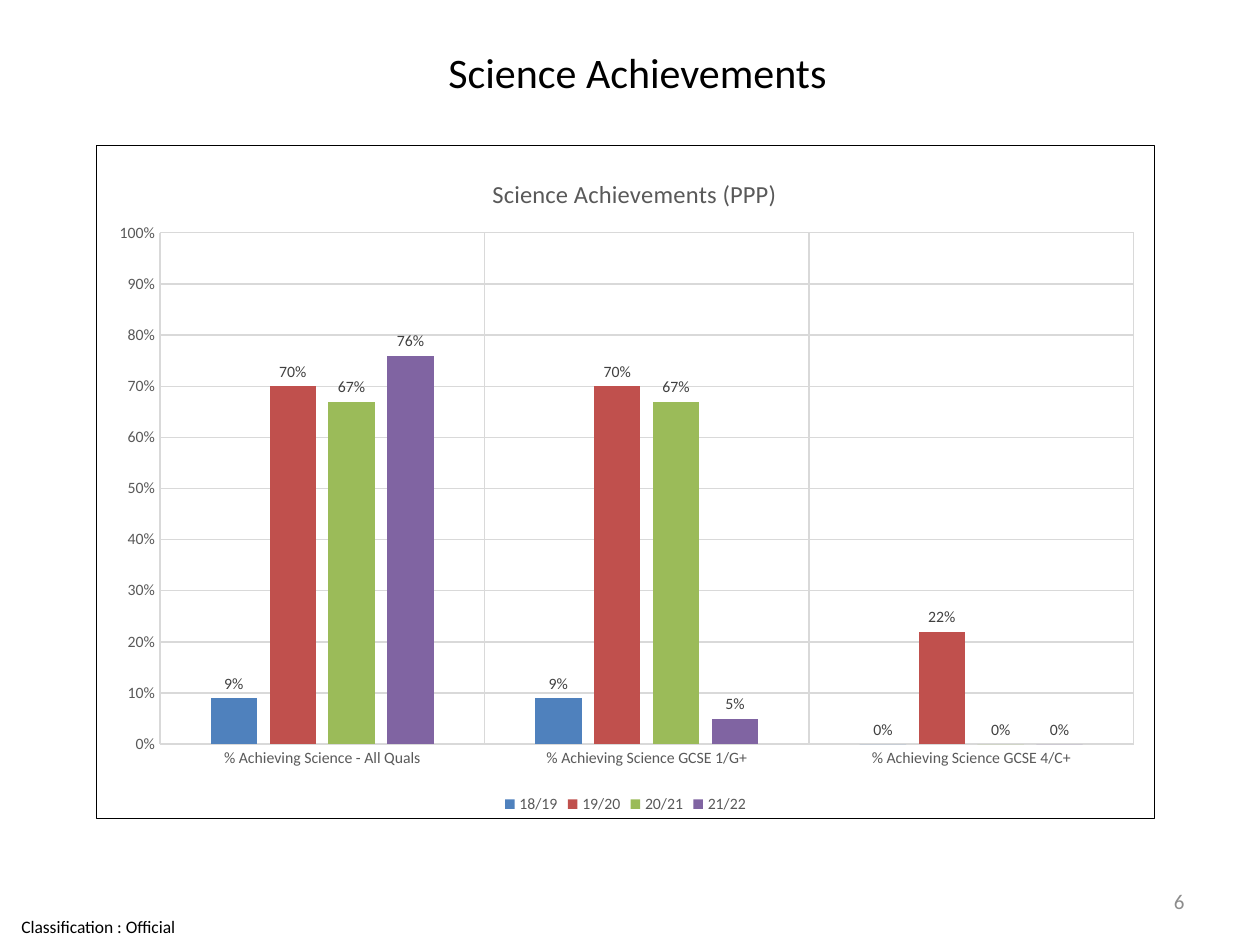
from dataclasses import dataclass

from lxml import etree
from pptx import Presentation, util as u
from pptx.chart.data import CategoryChartData
from pptx.dml.color import RGBColor
from pptx.enum import chart as ch, text
from pptx.oxml import parse_xml
from pptx.oxml.ns import nsdecls, qn

W, H = u.Inches(10), u.Inches(7.5)
FONT = "Calibri"
BLACK = RGBColor(0x00, 0x00, 0x00)
DARK = RGBColor(0x40, 0x40, 0x40)
GREY = RGBColor(0x59, 0x59, 0x59)
MUTED = RGBColor(0x8C, 0x8C, 0x8C)
GRID = RGBColor(0xD9, 0xD9, 0xD9)
BLUE = RGBColor(0x4F, 0x81, 0xBD)
RED = RGBColor(0xC0, 0x50, 0x4D)
GREEN = RGBColor(0x9B, 0xBB, 0x59)
PURPLE = RGBColor(0x80, 0x64, 0xA2)


@dataclass
class Label:
    words: str
    box: tuple  # left, top, width, height in inches
    size: int
    color: RGBColor
    align: text.PP_ALIGN
    margin: float = 0.1


@dataclass
class Year:
    name: str
    values: tuple
    color: RGBColor


LABELS = [
    Label("Classification : Official", (0, 7.21, 1.56, 0.29), 10, BLACK, text.PP_ALIGN.CENTER, 0),
    Label("Science Achievements", (0.76, 0.29, 8.6, 0.55), 24, BLACK, text.PP_ALIGN.CENTER),
    Label("6", (7.17, 6.95, 2.33, 0.4), 12, MUTED, text.PP_ALIGN.RIGHT),
]
CATEGORIES = [f"% Achieving Science {q}" for q in ("- All Quals", "GCSE 1/G+", "GCSE 4/C+")]
YEARS = [
    Year("18/19", (0.09, 0.09, 0), BLUE),
    Year("19/20", (0.7, 0.7, 0.22), RED),
    Year("20/21", (0.67, 0.67, 0), GREEN),
    Year("21/22", (0.76, 0.05, 0), PURPLE),
]


def set_font(font, size: float, color: RGBColor) -> None:
    font.name, font.size, font.bold = FONT, u.Pt(size), False
    font.color.rgb = color


def set_line(line, color: RGBColor) -> None:
    line.color.rgb, line.width = color, u.Pt(0.75)


def add_label(s, label: Label) -> None:
    tf = s.shapes.add_textbox(*map(u.Inches, label.box)).text_frame
    tf.word_wrap = True
    tf.vertical_anchor = text.MSO_ANCHOR.MIDDLE
    tf.margin_left = tf.margin_right = u.Inches(label.margin)
    tf.margin_top = tf.margin_bottom = 0
    p = tf.paragraphs[0]
    p.alignment = label.align
    r = p.add_run()
    r.text = label.words
    set_font(r.font, label.size, label.color)


def place(parent, before: str, **shares: float) -> None:
    """Give a chart part a manual layout, in shares of the chart."""
    for old in parent.findall(qn("c:layout")):
        parent.remove(old)
    layout = parse_xml(f"<c:layout {nsdecls('c')}><c:manualLayout/></c:layout>")
    manual = layout[0]
    if "w" in shares:
        etree.SubElement(manual, qn("c:layoutTarget")).set("val", "inner")
    for mode in ("xMode", "yMode"):
        etree.SubElement(manual, qn(f"c:{mode}")).set("val", "edge")
    for key, share in shares.items():
        etree.SubElement(manual, qn(f"c:{key}")).set("val", str(share))
    parent.find(qn(before)).addprevious(layout)


def style_axis(axis) -> None:
    axis.major_tick_mark = axis.minor_tick_mark = ch.XL_TICK_MARK.NONE
    set_font(axis.tick_labels.font, 9, GREY)
    axis.has_major_gridlines = True
    set_line(axis.major_gridlines.format.line, GRID)


def add_results_chart(s) -> None:
    data = CategoryChartData(number_format="0%")
    data.categories = CATEGORIES
    for year in YEARS:
        data.add_series(year.name, year.values)
    box = map(u.Inches, (0.76, 1.15, 8.41, 5.35))
    chart = s.shapes.add_chart(ch.XL_CHART_TYPE.COLUMN_CLUSTERED, *box, data).chart
    set_font(chart.font, 10, BLACK)

    # Title and legend
    chart.has_title = True
    r = chart.chart_title.text_frame.paragraphs[0].add_run()
    r.text = "Science Achievements (PPP)"
    set_font(r.font, 14, GREY)
    chart.has_legend = True
    chart.legend.position = ch.XL_LEGEND_POSITION.BOTTOM
    chart.legend.include_in_layout = False
    set_font(chart.legend.font, 9, GREY)

    # Axes
    style_axis(chart.category_axis)
    set_line(chart.category_axis.format.line, GRID)
    axis = chart.value_axis
    style_axis(axis)
    axis.format.line.fill.background()
    axis.minimum_scale, axis.maximum_scale, axis.major_unit = 0, 1, 0.1
    axis.tick_labels.number_format = "0%"
    axis.tick_labels.number_format_is_linked = False

    # Columns
    plot = chart.plots[0]
    plot.gap_width, plot.overlap, plot.vary_by_categories = 219, -27, False
    for series, year in zip(plot.series, YEARS):
        series.format.fill.solid()
        series.format.fill.fore_color.rgb = year.color
        labels = series.data_labels
        labels.show_value = True
        labels.position = ch.XL_LABEL_POSITION.OUTSIDE_END
        labels.number_format, labels.number_format_is_linked = "0%", False
        set_font(labels.font, 9, DARK)

    # Layout and frame
    space = chart.element
    place(space.find(".//" + qn("c:plotArea")), "c:barChart", x=0.06, y=0.13, w=0.92, h=0.76)
    place(space.find(".//" + qn("c:title")), "c:overlay", x=0.37, y=0.04)
    space.find(qn("c:chart")).addnext(parse_xml(
        f'<c:spPr {nsdecls("c", "a")}><a:solidFill><a:srgbClr val="FFFFFF"/></a:solidFill>'
        f'<a:ln w="{u.Pt(0.75)}"><a:solidFill><a:srgbClr val="{BLACK}"/></a:solidFill></a:ln></c:spPr>'))


def main() -> None:
    prs = Presentation()
    prs.slide_width, prs.slide_height = W, H
    s = prs.slides.add_slide(prs.slide_layouts[6])
    for label in LABELS:
        add_label(s, label)
    add_results_chart(s)
    prs.save("out.pptx")


if __name__ == "__main__":
    main()
